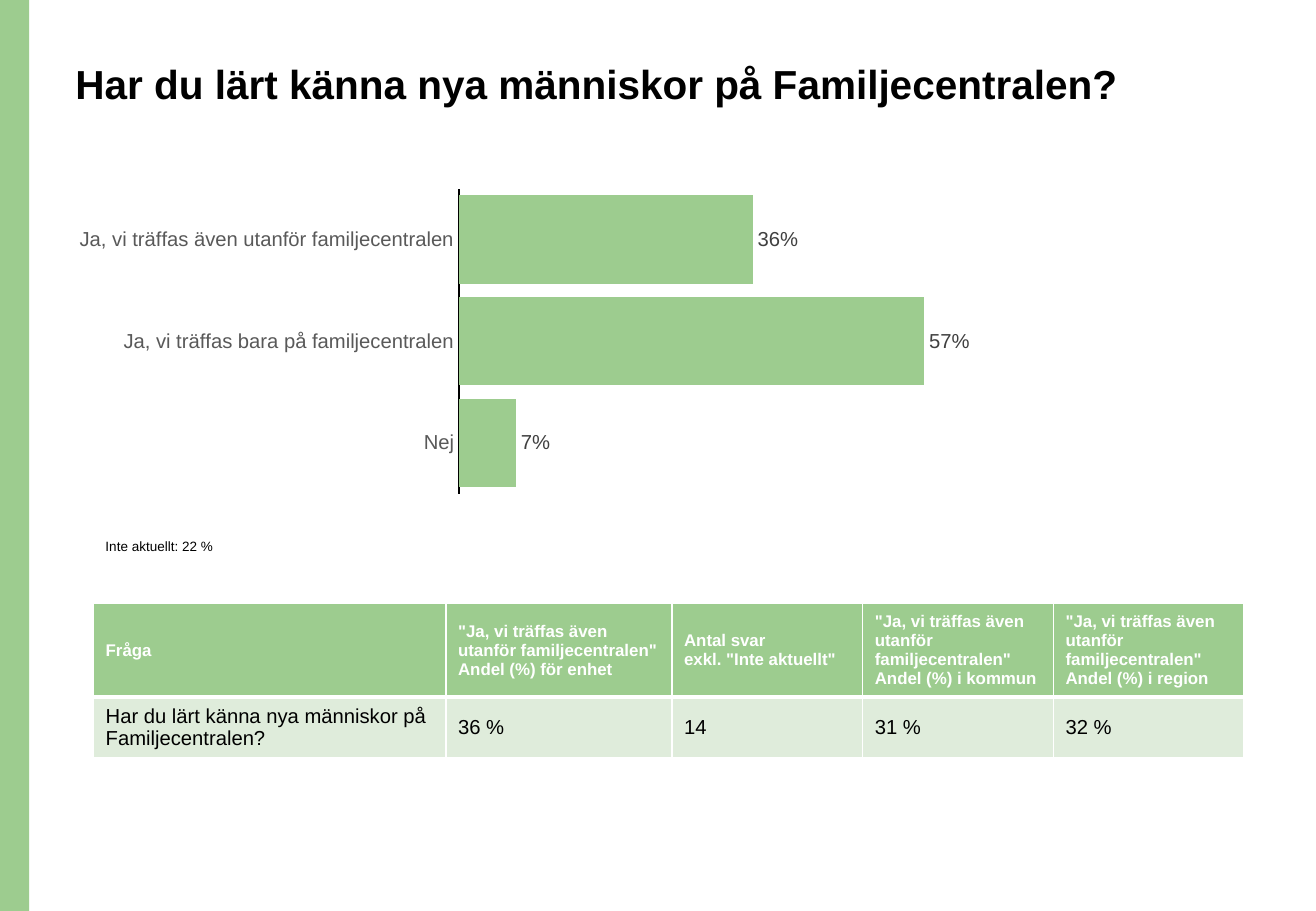
from pptx import Presentation
from pptx.chart.data import CategoryChartData
from pptx.dml.color import RGBColor
from pptx.enum.chart import XL_CHART_TYPE, XL_LABEL_POSITION, XL_TICK_MARK
from pptx.enum.shapes import MSO_SHAPE
from pptx.enum.text import MSO_ANCHOR, PP_ALIGN
from pptx.oxml import parse_xml
from pptx.oxml.ns import nsdecls
from pptx.util import Inches, Pt

GREEN = RGBColor(0x9D, 0xCC, 0x8F)
PALE = RGBColor(0xDF, 0xEC, 0xDB)
BLACK = RGBColor(0, 0, 0)
WHITE = RGBColor(0xFF, 0xFF, 0xFF)
GREY = RGBColor(0x59, 0x59, 0x59)
DARK = RGBColor(0x40, 0x40, 0x40)

QUERY = "Har du lärt känna nya människor på Familjecentralen?"
NOTE = "Inte aktuellt: 22 %"
BARS = [
    ("Ja, vi träffas även utanför familjecentralen", 0.36),
    ("Ja, vi träffas bara på familjecentralen", 0.57),
    ("Nej", 0.07),
]
YES = f'"{BARS[0][0]}"'
ROWS = [
    ["Fråga", f"{YES}\nAndel (%) för enhet", 'Antal svar\nexkl. "Inte aktuellt"',
     f"{YES}\nAndel (%) i kommun", f"{YES}\nAndel (%) i region"],
    [QUERY, "36 %", "14", "31 %", "32 %"],
]
WIDTHS = [2.9, 1.86, 1.57, 1.57, 1.57]
HEIGHTS = [0.71, 0.46]
STYLES = [(10, WHITE, True, GREEN), (12, BLACK, False, PALE)]
EDGES = [{"L": 1, "R": 1, "T": 1, "B": 3}, {"L": 1, "R": 1, "T": 3, "B": 1}]
PLOT = {"x": 0.437, "y": 0.017, "w": 0.541, "h": 0.958}


def style(font, size, color, bold=False):
    font.name = "Arial"
    font.size = Pt(size)
    font.bold = bold
    font.color.rgb = color


def write(frame, text, size, color, bold=False):
    frame.text = text
    frame.word_wrap = True
    for para in frame.paragraphs:
        para.alignment = PP_ALIGN.LEFT
        for run in para.runs:
            style(run.font, size, color, bold)


def edge(cell, sides):
    props = cell._tc.get_or_add_tcPr()
    for side, width in sides.items():
        props.append(parse_xml(
            f'<a:ln{side} {nsdecls("a")} w="{Pt(width)}"><a:solidFill>'
            f'<a:srgbClr val="{WHITE}"/></a:solidFill></a:ln{side}>'))


def add_bar(slide, height):
    bar = slide.shapes.add_shape(MSO_SHAPE.RECTANGLE, 0, 0, Inches(0.24), height)
    bar.shadow.inherit = False
    bar.fill.solid()
    bar.fill.fore_color.rgb = GREEN
    bar.line.fill.background()


def add_title(slide):
    title = slide.shapes.title
    title.left, title.top = Inches(0.52), Inches(0.48)
    title.width, title.height = Inches(9.34), Inches(1.02)
    frame = title.text_frame
    write(frame, QUERY, 24, BLACK, True)
    frame.vertical_anchor = MSO_ANCHOR.TOP
    frame.paragraphs[0].line_spacing = 0.9


def add_graph(slide):
    data = CategoryChartData(number_format="0%")
    data.categories = [name for name, _ in BARS]
    data.add_series("Series 1", [value for _, value in BARS])
    chart = slide.shapes.add_chart(
        XL_CHART_TYPE.BAR_CLUSTERED, Inches(0.52), Inches(1.51),
        Inches(7.46), Inches(2.62), data).chart
    chart.has_legend = False
    chart.has_title = False
    style(chart.font, 10, BLACK)

    axis = chart.category_axis
    axis.reverse_order = True
    axis.major_tick_mark = XL_TICK_MARK.NONE
    axis.format.line.color.rgb = BLACK
    axis.format.line.width = Pt(0.75)
    style(axis.tick_labels.font, 12, GREY)

    scale = chart.value_axis
    scale.minimum_scale = 0
    scale.maximum_scale = 0.6
    scale.has_major_gridlines = False
    scale.visible = False

    plot = chart.plots[0]
    plot.gap_width = 15
    plot.vary_by_categories = False
    fill = plot.series[0].format.fill
    fill.solid()
    fill.fore_color.rgb = GREEN
    plot.has_data_labels = True
    labels = plot.data_labels
    labels.show_value = True
    labels.position = XL_LABEL_POSITION.OUTSIDE_END
    labels.number_format = "0%"
    labels.number_format_is_linked = False
    style(labels.font, 12, DARK)

    area = chart._chartSpace.chart.plotArea
    for old in area.findall(area.tag.replace("plotArea", "layout")):
        area.remove(old)
    modes = '<c:xMode val="edge"/><c:yMode val="edge"/>'
    sizes = "".join(f'<c:{key} val="{part}"/>' for key, part in PLOT.items())
    area.insert(0, parse_xml(
        f'<c:layout {nsdecls("c")}><c:manualLayout><c:layoutTarget val="inner"/>'
        f'{modes}{sizes}</c:manualLayout></c:layout>'))


def add_note(slide):
    box = slide.shapes.add_textbox(Inches(0.77), Inches(4.31), Inches(2.1), Inches(0.28))
    write(box.text_frame, NOTE, 8, BLACK)
    box.text_frame.paragraphs[0].line_spacing = 1.5


def add_grid(slide):
    table = slide.shapes.add_table(
        len(ROWS), len(WIDTHS), Inches(0.77), Inches(4.97),
        Inches(sum(WIDTHS)), Inches(sum(HEIGHTS))).table
    table.horz_banding = False
    for col, width in zip(table.columns, WIDTHS):
        col.width = Inches(width)
    for row, height, texts, look, sides in zip(table.rows, HEIGHTS, ROWS, STYLES, EDGES):
        row.height = Inches(height)
        size, color, bold, back = look
        for cell, text in zip(row.cells, texts):
            write(cell.text_frame, text, size, color, bold)
            cell.vertical_anchor = MSO_ANCHOR.MIDDLE
            edge(cell, sides)
            cell.fill.solid()
            cell.fill.fore_color.rgb = back


def main():
    deck = Presentation()
    deck.slide_width, deck.slide_height = Inches(10.83), Inches(7.5)
    slide = deck.slides.add_slide(deck.slide_layouts[5])
    add_bar(slide, deck.slide_height)
    add_title(slide)
    add_graph(slide)
    add_note(slide)
    add_grid(slide)
    deck.save("out.pptx")


if __name__ == "__main__":
    main()
